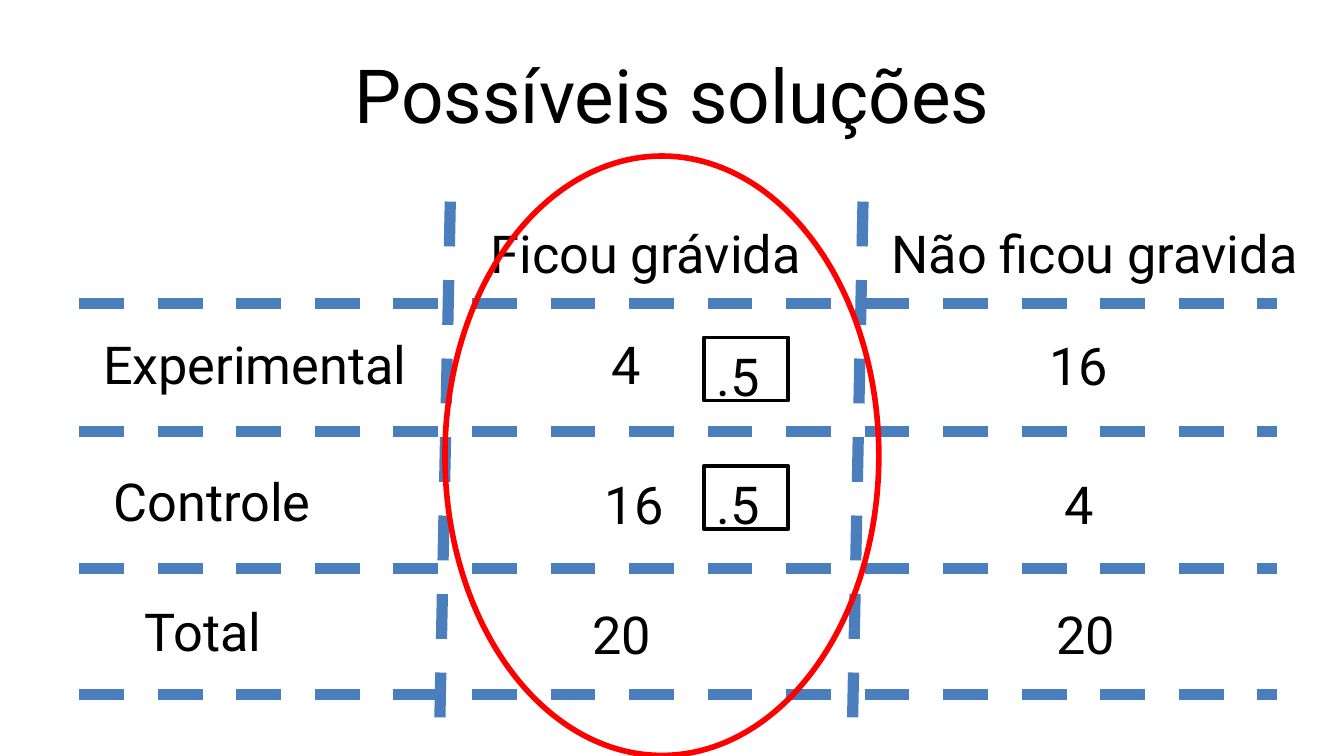
from dataclasses import dataclass

from pptx import Presentation
from pptx.dml.color import RGBColor
from pptx.enum.dml import MSO_LINE
from pptx.enum.shapes import MSO_CONNECTOR, MSO_SHAPE
from pptx.enum.text import MSO_ANCHOR, PP_ALIGN
from pptx.oxml.ns import qn
from pptx.util import Cm, Pt


@dataclass(frozen=True)
class Theme:
    font: str = "Roboto"
    head: int = 40
    body: int = 28
    ink: RGBColor = RGBColor(0, 0, 0)
    paper: RGBColor = RGBColor(255, 255, 255)
    grid: RGBColor = RGBColor(0x4B, 0x7E, 0xBC)
    mark: RGBColor = RGBColor(255, 0, 0)


class Board:
    """Draw styled elements on the current slide, in centimetres."""

    def __init__(self, slide, theme):
        self.slide = slide
        self.theme = theme

    def fill_text(self, frame, text, size, align, anchor):
        frame.word_wrap = True
        frame.vertical_anchor = anchor
        para = frame.paragraphs[0]
        para.text = text
        para.alignment = align
        para.font.name = self.theme.font
        para.font.size = Pt(size)
        para.font.color.rgb = self.theme.ink

    def title(self, text, x, y, w, h):
        shape = self.slide.shapes.title
        shape.left, shape.top, shape.width, shape.height = map(Cm, (x, y, w, h))
        self.fill_text(shape.text_frame, text, self.theme.head,
                       PP_ALIGN.CENTER, MSO_ANCHOR.MIDDLE)

    def label(self, text, x, y, w, h=1.47, align=PP_ALIGN.LEFT):
        box = self.slide.shapes.add_textbox(*map(Cm, (x, y, w, h)))
        self.fill_text(box.text_frame, text, self.theme.body, align, MSO_ANCHOR.TOP)

    def rule(self, x1, y1, x2, y2):
        line = self.slide.shapes.add_connector(
            MSO_CONNECTOR.STRAIGHT, *map(Cm, (x1, y1, x2, y2)))
        line.line.color.rgb = self.theme.grid
        line.line.width = Pt(6)
        line.line.dash_style = MSO_LINE.DASH
        props = line.element.spPr
        props.append(props.makeelement(qn("a:effectLst"), {}))

    def shape(self, kind, x, y, w, h, color, width):
        shape = self.slide.shapes.add_shape(kind, *map(Cm, (x, y, w, h)))
        shape.shadow.inherit = False
        shape.fill.background()
        shape.line.color.rgb = color
        shape.line.width = Pt(width)
        return shape

    def ring(self, x, y, w, h):
        self.shape(MSO_SHAPE.OVAL, x, y, w, h, self.theme.mark, 3)

    def badge(self, text, x, y):
        box = self.shape(MSO_SHAPE.RECTANGLE, x, y, 1.6, 1.19, self.theme.ink, 2)
        box.fill.solid()
        box.fill.fore_color.rgb = self.theme.paper
        self.fill_text(box.text_frame, text, self.theme.body,
                       PP_ALIGN.LEFT, MSO_ANCHOR.TOP)


def main():
    deck = Presentation()
    deck.slide_width, deck.slide_height = Cm(25.4), Cm(14.29)
    board = Board(deck.slides.add_slide(deck.slide_layouts[5]), Theme())

    board.title("Possíveis soluções", 1.27, 0.58, 22.86, 2.39)
    for y in (5.74, 8.15, 10.74, 13.13):
        board.rule(1.5, y, 24.13, y)
    for x in (8.51, 16.31):
        board.rule(x, 3.81, x - 0.2, 13.74)

    labels = (
        ("Ficou grávida", 9.02, 4.06, 7),
        ("Não ficou gravida", 16.6, 4.06, 8.6),
        ("Experimental", 1.7, 6.15, 6.7),
        ("4", 11.3, 6.15, 1.8),
        ("Controle", 1.9, 8.74, 5.4),
        ("16", 11.18, 8.81, 2),
        ("4", 19.86, 8.81, 2),
        ("Total", 2.49, 11.2, 3.4),
        ("20", 10.95, 11.25, 3),
        ("20", 19.71, 11.25, 3),
    )
    for text, x, y, w in labels:
        board.label(text, x, y, w)
    board.label("16", 17.7, 6.17, 5.38, align=PP_ALIGN.CENTER)

    board.ring(8.41, 2.95, 8.2, 11.33)
    for y in (6.38, 8.81):
        board.badge(".5", 13.3, y)

    deck.save("out.pptx")


if __name__ == "__main__":
    main()
